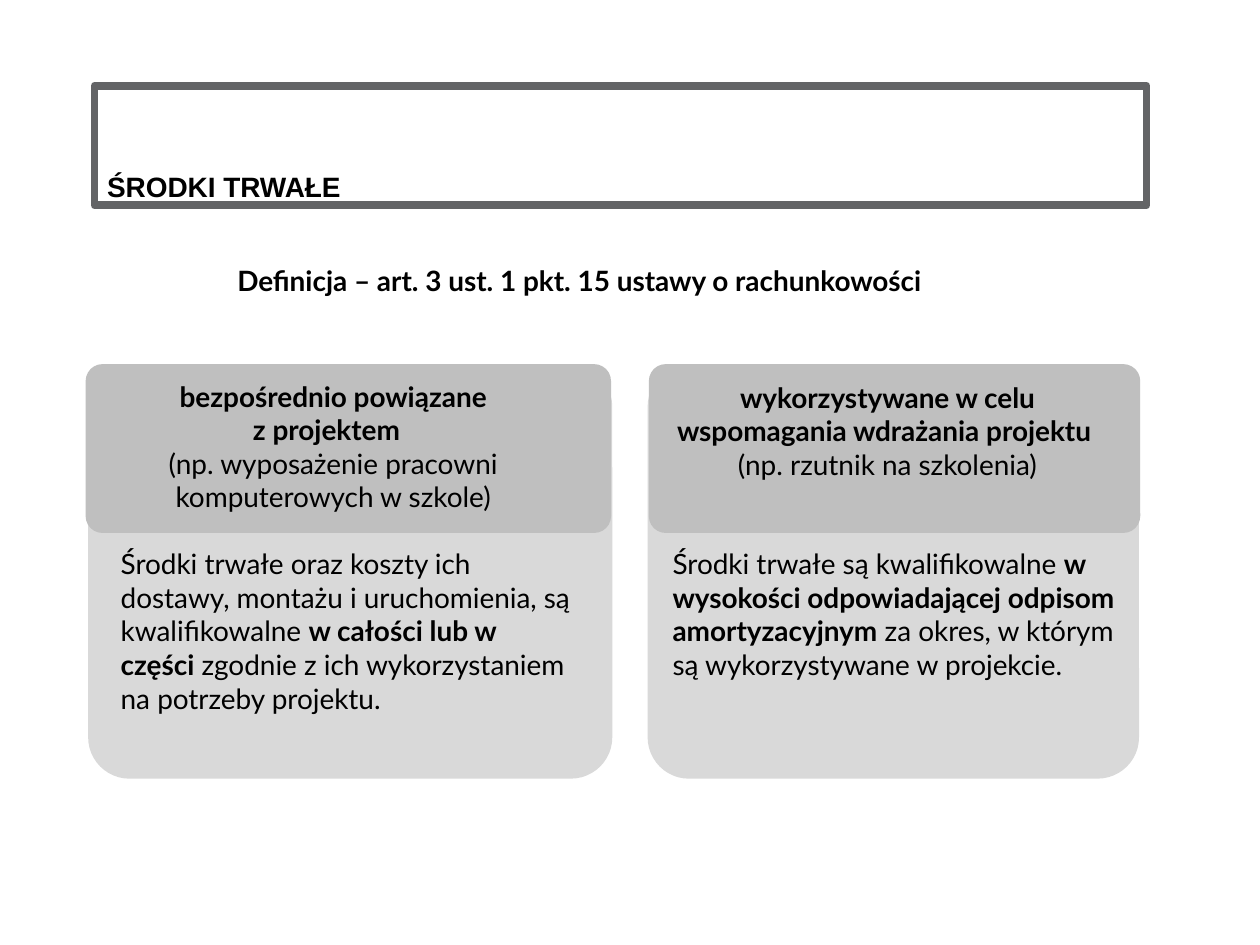
from dataclasses import dataclass

from pptx import Presentation
from pptx.dml.color import RGBColor
from pptx.enum.shapes import MSO_SHAPE
from pptx.enum.text import MSO_ANCHOR, PP_ALIGN
from pptx.slide import Slide
from pptx.text.text import TextFrame
from pptx.util import Inches, Pt


@dataclass(frozen=True)
class Box:
    left: float
    top: float
    width: float
    height: float

    def lengths(self) -> list[Inches]:
        return [Inches(value) for value in (self.left, self.top, self.width, self.height)]


@dataclass(frozen=True)
class TextRun:
    text: str
    bold: bool = False


@dataclass(frozen=True)
class TextBlock:
    box: Box
    paragraphs: list[list[TextRun]]
    alignment: PP_ALIGN = PP_ALIGN.LEFT


@dataclass(frozen=True)
class Card:
    body: Box
    header: Box
    header_text: TextBlock
    body_text: TextBlock


CARDS = [
    Card(
        Box(0.7, 2.9, 4.16, 3.28),
        Box(0.68, 2.89, 4.17, 1.34),
        TextBlock(
            Box(0.57, 2.96, 4.15, 1.18),
            [
                [TextRun("bezpośrednio powiązane", True)],
                [TextRun("z projektem  ", True)],
                [TextRun("(np. wyposażenie pracowni komputerowych w szkole)")],
            ],
            PP_ALIGN.CENTER,
        ),
        TextBlock(
            Box(0.86, 4.29, 3.77, 1.72),
            [[
                TextRun("Środki trwałe oraz koszty ich dostawy, montażu i uruchomienia, są kwalifikowalne "),
                TextRun("w całości lub w części", True),
                TextRun(" zgodnie z ich wykorzystaniem na potrzeby projektu."),
            ]],
        ),
    ),
    Card(
        Box(5.14, 2.9, 3.9, 3.28),
        Box(5.15, 2.89, 3.9, 1.34),
        TextBlock(
            Box(5.16, 2.97, 3.77, 0.91),
            [
                [TextRun("wykorzystywane w celu wspomagania wdrażania projektu ", True)],
                [TextRun("(np. rzutnik na szkolenia)")],
            ],
            PP_ALIGN.CENTER,
        ),
        TextBlock(
            Box(5.24, 4.29, 3.77, 1.45),
            [[
                TextRun("Środki trwałe są kwalifikowalne "),
                TextRun("w wysokości odpowiadającej odpisom amortyzacyjnym", True),
                TextRun(" za okres, w którym są wykorzystywane w projekcie."),
            ]],
        ),
    ),
]

DEFINITION = TextBlock(
    Box(0.27, 2.04, 8.66, 0.37),
    [[TextRun("Definicja – art. 3 ust. 1 pkt. 15 ustawy o rachunkowości", True)]],
    PP_ALIGN.CENTER,
)


def color(value: str) -> RGBColor:
    return RGBColor.from_string(value)


def write_text(
    frame: TextFrame, paragraphs: list[list[TextRun]], alignment: PP_ALIGN, font_name: str
) -> None:
    frame.word_wrap = True
    for index, text_runs in enumerate(paragraphs):
        paragraph = frame.add_paragraph() if index else frame.paragraphs[0]
        paragraph.alignment = alignment
        for text_run in text_runs:
            run = paragraph.add_run()
            run.text = text_run.text
            run.font.name = font_name
            run.font.size = Pt(16)
            run.font.bold = text_run.bold
            run.font.color.rgb = color("000000")


def add_title(slide: Slide, text: str, box: Box) -> None:
    title = slide.shapes.title
    title.left, title.top, title.width, title.height = box.lengths()
    title.line.color.rgb = color("636466")
    title.line.width = Pt(4.5)
    frame = title.text_frame
    frame.vertical_anchor = MSO_ANCHOR.BOTTOM
    frame.margin_bottom = Inches(0.02)
    write_text(frame, [[TextRun(text, True)]], PP_ALIGN.LEFT, "Arial")


def add_panel(slide: Slide, box: Box, fill: str) -> None:
    shape = slide.shapes.add_shape(MSO_SHAPE.ROUNDED_RECTANGLE, *box.lengths())
    shape.adjustments[0] = 0.1
    shape.shadow.inherit = False
    shape.fill.solid()
    shape.fill.fore_color.rgb = color(fill)
    shape.line.fill.background()


def add_text(slide: Slide, block: TextBlock) -> None:
    shape = slide.shapes.add_textbox(*block.box.lengths())
    write_text(shape.text_frame, block.paragraphs, block.alignment, "Lato")


def main() -> None:
    presentation = Presentation()
    presentation.slide_width = Inches(10)
    presentation.slide_height = Inches(7.5)
    slide = presentation.slides.add_slide(presentation.slide_layouts.get_by_name("Title Only"))
    add_title(slide, "ŚRODKI TRWAŁE", Box(0.75, 0.68, 8.35, 0.95))
    for card in CARDS:
        add_panel(slide, card.body, "D9D9D9")
        add_panel(slide, card.header, "BFBFBF")
        add_text(slide, card.header_text)
        add_text(slide, card.body_text)
    add_text(slide, DEFINITION)
    presentation.save("out.pptx")


if __name__ == "__main__":
    main()
